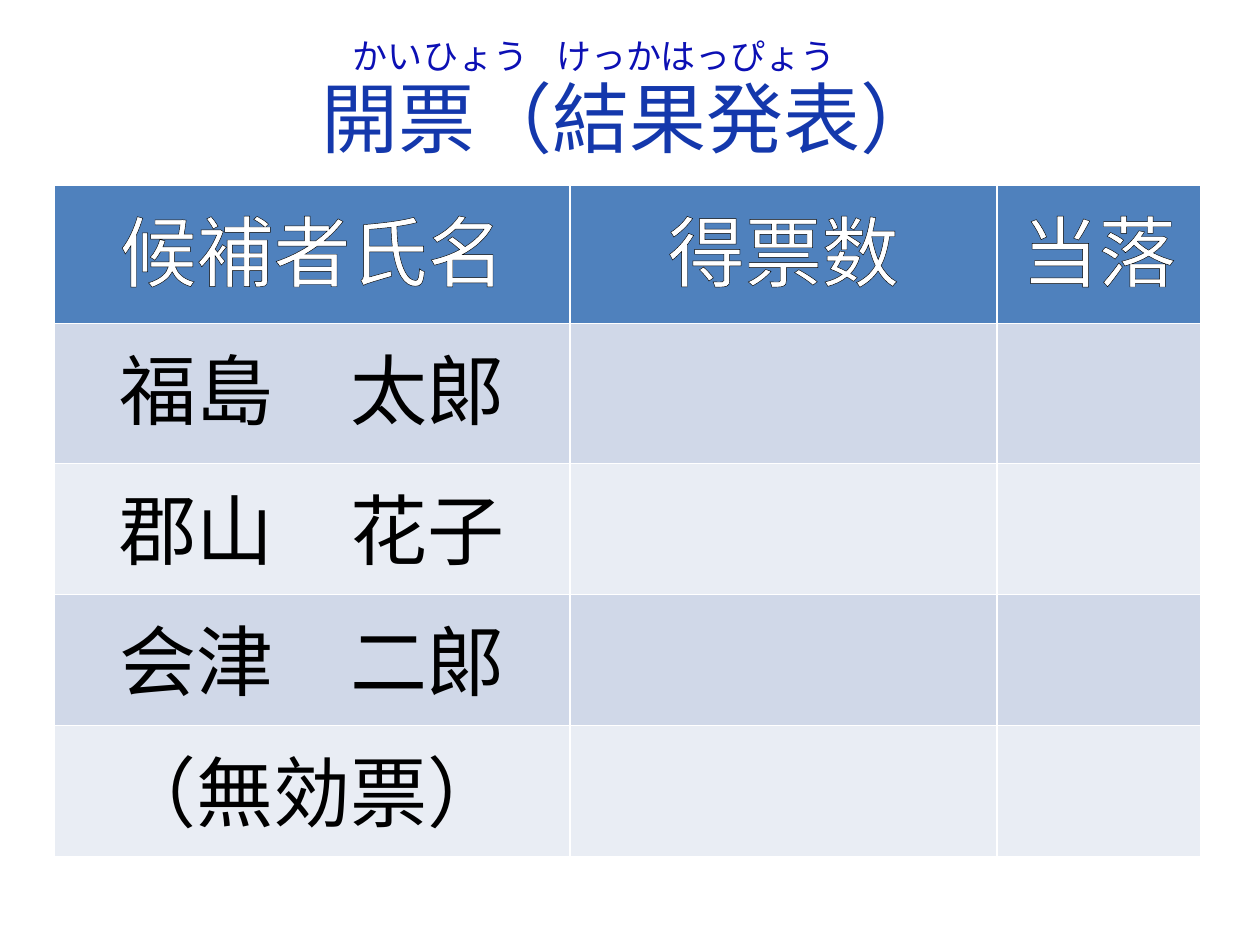
from typing import NamedTuple

from lxml.etree import SubElement
from pptx import Presentation
from pptx.dml.color import RGBColor
from pptx.enum.text import MSO_ANCHOR, PP_ALIGN
from pptx.oxml import parse_xml
from pptx.oxml.ns import qn
from pptx.util import Pt

FONT = "Noto Sans CJK JP"
COLORS = {
    "title": "1438AC",
    "reading": "0C10B4",
    "header": "4F81BD",
    "band_dark": "D0D8E8",
    "band_light": "E9EDF4",
    "white": "FFFFFF",
    "black": "000000",
}
DRAWING_NS = "http://schemas.openxmlformats.org/drawingml/2006/main"
HEADINGS = ["候補者氏名", "得票数", "当落"]
CANDIDATES = ["福島　太郎", "郡山　花子", "会津　二郎", "（無効票）"]
COLUMN_WIDTHS = [294.5, 244, 116.5]
ROW_HEIGHTS = [79.2, 79.9, 74.9, 74.9, 74.9]


class Label(NamedTuple):
    left: float
    top: float
    width: float
    height: float
    size: float
    color: str
    align: PP_ALIGN
    texts: list[str]
    margin_left: float = 7.2


TITLE = Label(36, 21.6, 648, 90, 44, "title", PP_ALIGN.CENTER, ["開票（結果発表）"])
READING = Label(190, 9.4, 374.4, 44.6, 20, "reading", PP_ALIGN.LEFT,
                ["かいひょう", "　", "けっかはっぴょう"], 11.7)


def style_font(font, size: float, color: str) -> None:
    """Set size, colour and the typeface for Latin and East Asian text."""
    font.size = Pt(size)
    font.bold = False
    font.color.rgb = RGBColor.from_string(COLORS[color])
    font.name = FONT
    SubElement(font._rPr, qn("a:ea"), typeface=FONT)


def outline_font(font, color: str, width: float) -> None:
    font._rPr.insert(0, parse_xml(
        f'<a:ln xmlns:a="{DRAWING_NS}" w="{Pt(width)}"><a:solidFill>'
        f'<a:srgbClr val="{COLORS[color]}"/></a:solidFill></a:ln>'))


def add_label(slide, label: Label):
    shape = slide.shapes.add_textbox(
        Pt(label.left), Pt(label.top), Pt(label.width), Pt(label.height))
    frame = shape.text_frame
    frame.word_wrap = True
    frame.vertical_anchor = MSO_ANCHOR.MIDDLE
    frame.margin_left = Pt(label.margin_left)
    paragraph = frame.paragraphs[0]
    paragraph.alignment = label.align
    style_font(paragraph.font, label.size, label.color)
    for text in label.texts:
        paragraph.add_run().text = text
    return paragraph


def fill_cell(cell, text: str, fill: str, color: str, outlined: bool) -> None:
    cell.fill.solid()
    cell.fill.fore_color.rgb = RGBColor.from_string(COLORS[fill])
    if not text:
        return
    paragraph = cell.text_frame.paragraphs[0]
    paragraph.alignment = PP_ALIGN.CENTER
    run = paragraph.add_run()
    run.text = text
    style_font(run.font, 44, color)
    if outlined:
        outline_font(run.font, "black", 0.75)


def add_results_table(slide) -> None:
    """Add the table; its white grid lines come from the default table style."""
    rows = [HEADINGS] + [[name, "", ""] for name in CANDIDATES]
    table = slide.shapes.add_table(
        len(rows), len(HEADINGS), Pt(31.2), Pt(105.8),
        Pt(sum(COLUMN_WIDTHS)), Pt(sum(ROW_HEIGHTS))).table
    for column, width in zip(table.columns, COLUMN_WIDTHS):
        column.width = Pt(width)
    for row, height in zip(table.rows, ROW_HEIGHTS):
        row.height = Pt(height)
    for row_index, texts in enumerate(rows):
        is_header = row_index == 0
        band = "band_dark" if row_index % 2 else "band_light"
        for column_index, text in enumerate(texts):
            fill_cell(table.cell(row_index, column_index), text,
                      "header" if is_header else band,
                      "white" if is_header else "black", is_header)


def main() -> None:
    presentation = Presentation()
    presentation.slide_width = Pt(720)
    presentation.slide_height = Pt(540)
    slide = presentation.slides.add_slide(presentation.slide_layouts[6])
    add_label(slide, TITLE)
    add_results_table(slide)
    reading = add_label(slide, READING)
    reading.runs[1].font.size = Pt(16)
    presentation.save("out.pptx")


if __name__ == "__main__":
    main()
